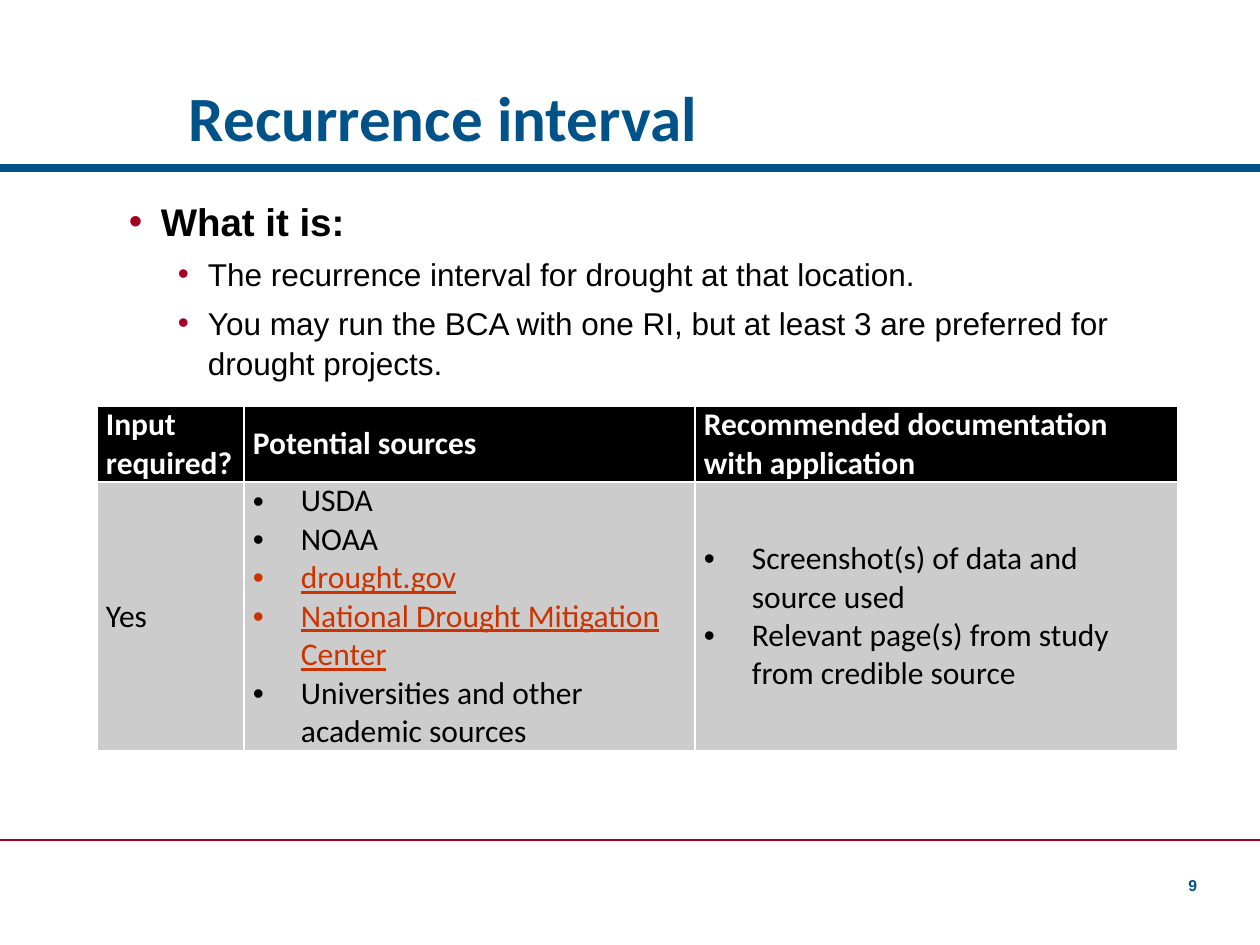
from lxml import etree
from pptx import Presentation
from pptx import util as u
from pptx.dml.color import RGBColor
from pptx.enum import shapes, text
from pptx.oxml import ns

EMU_PER_PX = u.Inches(1) / 126
COLORS = {"blue": "005288", "red": "A50021", "black": "000000",
          "white": "FFFFFF", "gray": "CCCCCC", "link": "CC3300"}
BULLETS = [("What it is:", 0),
           ("The recurrence interval for drought at that location.", 1),
           ("You may run the BCA with one RI, but at least 3 are preferred "
            "for drought projects.", 1)]
LEVELS = [{"left": 32, "hang": 32, "size": 22, "bold": True},
          {"left": 79, "hang": 30, "size": 18, "bold": False}]
HEADERS = ["Input required?", "Potential sources",
           "Recommended documentation with application"]
SOURCES = ["USDA", "NOAA", "drought.gov",
           "National Drought Mitigation Center",
           "Universities and other academic sources"]
LINKS = SOURCES[2:4]
DOCUMENTS = ["Screenshot(s) of data and source used",
             "Relevant page(s) from study from credible source"]


def px(count):
    return u.Emu(round(count * EMU_PER_PX))


def rgb(name):
    return RGBColor.from_string(COLORS[name])


def child(parent, tag, **attributes):
    return etree.SubElement(parent, ns.qn(tag), attributes)


def style(para, size, color, name="Calibri", bold=False, underline=None):
    font = para.font
    font.name, font.size, font.bold = name, u.Pt(size), bold
    font.underline = underline
    font.color.rgb = rgb(color)


def add_bullet(para, left, hang, color=None):
    properties = para._p.get_or_add_pPr()
    properties.set("marL", str(px(left)))
    properties.set("indent", str(-px(hang)))
    if color:
        child(child(properties, "a:buClr"), "a:srgbClr", val=COLORS[color])
    child(properties, "a:buFont", typeface="Arial")
    child(properties, "a:buChar", char="•")


def add_paragraphs(frame, lines):
    for index, line in enumerate(lines):
        para = frame.add_paragraph() if index else frame.paragraphs[0]
        para.text = line
        yield para


def add_text_frame(page, box, anchor, insets):
    frame = page.shapes.add_textbox(*map(px, box)).text_frame
    frame.word_wrap = True
    frame.vertical_anchor = anchor
    (frame.margin_left, frame.margin_top,
     frame.margin_right, frame.margin_bottom) = map(px, insets)
    return frame


def add_rule(page, y, color, weight):
    rule = page.shapes.add_connector(
        shapes.MSO_CONNECTOR.STRAIGHT, 0, px(y), px(1260), px(y))
    rule.line.color.rgb = rgb(color)
    rule.line.width = u.Pt(weight)
    child(rule._element.spPr, "a:effectLst")


def add_title(page, box):
    frame = add_text_frame(page, box, text.MSO_ANCHOR.BOTTOM, (0, 6, 13, 6))
    para = frame.paragraphs[0]
    para.text = "Recurrence interval"
    para.line_spacing = 0.9
    style(para, 36, "blue", bold=True)


def add_body(page, box):
    frame = add_text_frame(page, box, text.MSO_ANCHOR.TOP, (13, 6, 13, 6))
    lines, levels = zip(*BULLETS)
    for para, depth in zip(add_paragraphs(frame, lines), levels):
        level = LEVELS[depth]
        para.level = depth
        para.line_spacing = 1.06
        para.space_before = u.Pt(5)
        add_bullet(para, level["left"], level["hang"], "red")
        style(para, level["size"], "black", "Arial", level["bold"])


def add_borders(cell):
    properties = cell._tc.get_or_add_tcPr()
    for index, side in enumerate(("a:lnL", "a:lnR", "a:lnT", "a:lnB")):
        border = etree.Element(ns.qn(side), w=str(u.Pt(1)))
        child(child(border, "a:solidFill"), "a:srgbClr", val=COLORS["white"])
        properties.insert(index, border)


def fill_cell(cell, lines, fill, color, bold=False, bulleted=False):
    cell.fill.solid()
    cell.fill.fore_color.rgb = rgb(fill)
    cell.vertical_anchor = text.MSO_ANCHOR.MIDDLE
    cell.margin_left = cell.margin_right = px(9)
    cell.margin_top = cell.margin_bottom = 0
    add_borders(cell)
    for para in add_paragraphs(cell.text_frame, lines):
        linked = para.text in LINKS
        if bulleted:
            add_bullet(para, 48, 48)
        style(para, 18, "link" if linked else color, bold=bold,
              underline=linked or None)


def add_sources_table(page, box):
    table = page.shapes.add_table(2, 3, *map(px, box)).table
    table.horz_banding = False
    for column, width in zip(table.columns, (147, 451, 483)):
        column.width = px(width)
    for row, height in zip(table.rows, (76, 269)):
        row.height = px(height)
    for index, header in enumerate(HEADERS):
        fill_cell(table.cell(0, index), [header], "black", "white", bold=True)
    for index, lines in enumerate((["Yes"], SOURCES, DOCUMENTS)):
        fill_cell(table.cell(1, index), lines, "gray", "black",
                  bulleted=index > 0)


def add_page_number(page, box):
    frame = add_text_frame(page, box, text.MSO_ANCHOR.BOTTOM, (0, 6, 0, 6))
    para = frame.paragraphs[0]
    para.text = "9"
    para.alignment = text.PP_ALIGN.RIGHT
    style(para, 9, "blue", "Arial", bold=True)


def main():
    deck = Presentation()
    deck.slide_width, deck.slide_height = px(1260), px(945)
    page = deck.slides.add_slide(deck.slide_layouts[6])
    add_rule(page, 168, "blue", 4.5)
    add_rule(page, 840, "red", 1.5)
    add_title(page, (189, 0, 1008, 161))
    add_body(page, (116, 189, 1081, 599))
    add_sources_table(page, (97, 406, 1081, 345))
    add_page_number(page, (1155, 869, 42, 32))
    deck.save("out.pptx")


if __name__ == "__main__":
    main()
